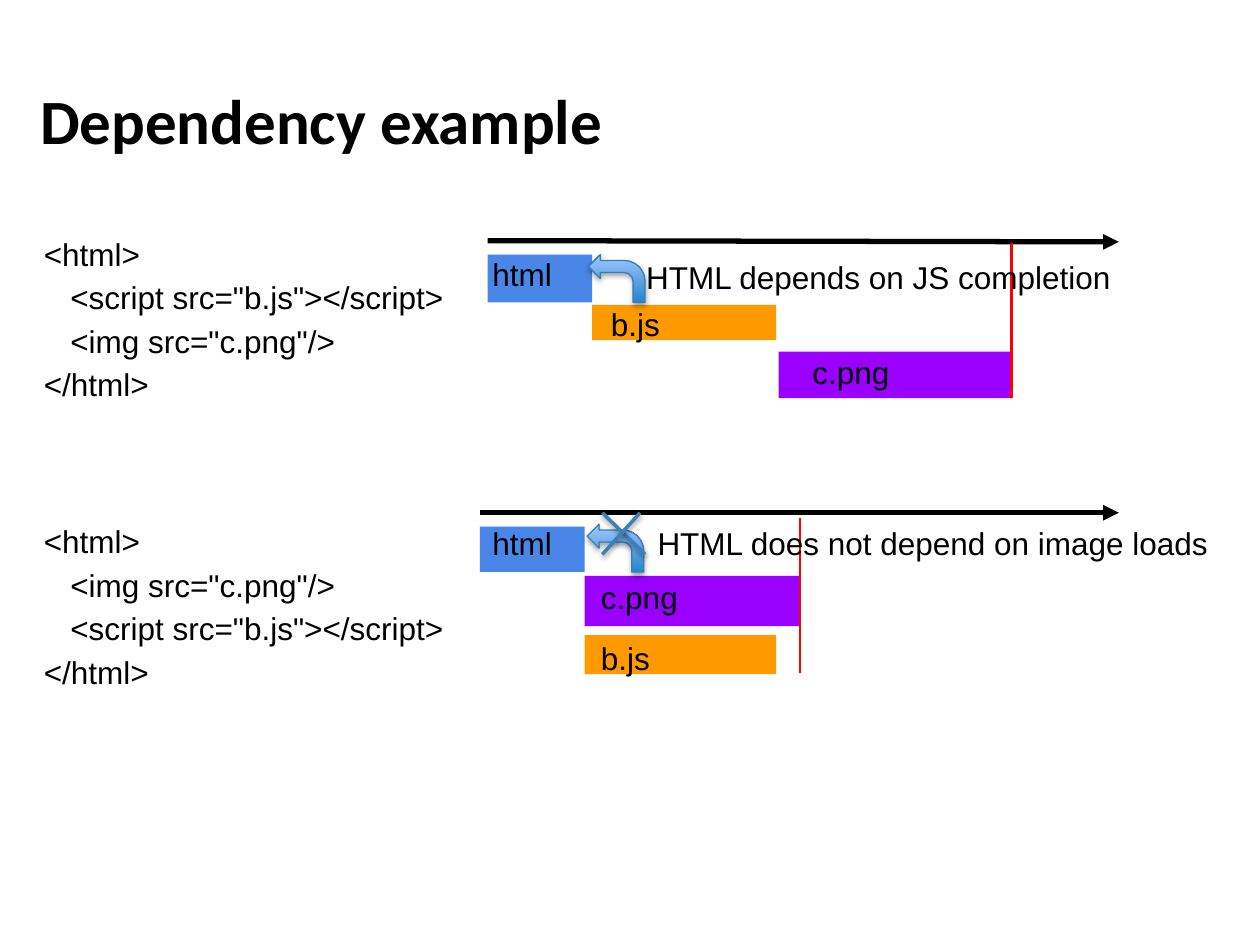
from pptx import Presentation
from pptx.dml.color import RGBColor
from pptx.enum.shapes import MSO_CONNECTOR, MSO_SHAPE
from pptx.enum.text import MSO_ANCHOR
from pptx.oxml.ns import qn
from pptx.util import Inches, Pt
from lxml import etree

STRAIGHT = MSO_CONNECTOR.STRAIGHT
RECT, BENT_ARROW = MSO_SHAPE.RECTANGLE, MSO_SHAPE.BENT_ARROW
TOP, BOTTOM = MSO_ANCHOR.TOP, MSO_ANCHOR.BOTTOM
BLACK, RED, STRIKE = "000000", "FF0000", "3A81BA"
BLUE, ORANGE, PURPLE = "4A86E8", "FF9900", "9900FF"
SCRIPT, IMAGE = '<script src="b.js"></script>', '<img src="c.png"/>'


def rgb(color):
    """Turn a hex string into a colour."""
    return RGBColor.from_string(color)


def add_shadow(sp, alpha, dist):
    """Give a shape or connector a soft shadow straight below it."""
    effects = sp._element.spPr.find(qn("a:effectLst"))
    shadow = etree.SubElement(effects, qn("a:outerShdw"), blurRad=str(Pt(3.1)),
                              dist=str(Pt(dist)), dir="5400000", rotWithShape="0")
    color = etree.SubElement(shadow, qn("a:srgbClr"), val=BLACK)
    etree.SubElement(color, qn("a:alpha"), val=str(alpha * 1000))


def add_text(s, box, lines, size=18, font="Arial", bold=False, anchor=TOP,
             inset=0.1, wrap=True, spacing=None):
    """Add a text box; each line is a pair of text and left margin."""
    tf = s.shapes.add_textbox(*map(Inches, box)).text_frame
    tf.word_wrap, tf.vertical_anchor = wrap, anchor
    tf.margin_left = tf.margin_right = Inches(0.1)
    tf.margin_top = tf.margin_bottom = Inches(inset)
    for i, (text, margin) in enumerate(lines):
        p = tf.add_paragraph() if i else tf.paragraphs[0]
        if margin:
            p._p.get_or_add_pPr().set("marL", str(Inches(margin)))
        if spacing:
            p.line_spacing = spacing
        r = p.add_run()
        r.text = text
        r.font.name, r.font.size, r.font.bold = font, Pt(size), bold
        r.font.color.rgb = rgb(BLACK)


def add_code(s, top, tags):
    """Add an html listing with the given tags indented inside it."""
    lines = [("<html>", 0), *((tag, 0.21) for tag in tags), ("</html>", 0)]
    add_text(s, (0.25, top, 3.6, 1.6), lines, spacing=1.15)


def add_bar(s, box, color):
    """Add a plain load bar."""
    sp = s.shapes.add_shape(RECT, *map(Inches, box))
    sp.shadow.inherit = False
    sp.fill.solid()
    sp.fill.fore_color.rgb = rgb(color)
    sp.line.fill.background()


def add_line(shapes, ends, color, width, arrow=False):
    """Add a straight line, with an arrowhead at its end if asked."""
    sp = shapes.add_connector(STRAIGHT, *map(Inches, ends))
    sp.line.color.rgb = rgb(color)
    sp.line.width = Pt(width)
    if arrow:
        etree.SubElement(sp.line._get_or_add_ln(), qn("a:tailEnd"), type="triangle")
    etree.SubElement(sp._element.spPr, qn("a:effectLst"))
    return sp


def add_dependency(s, left, top):
    """Add the bent arrow that points back at the html bar."""
    sp = s.shapes.add_shape(BENT_ARROW, *map(Inches, (left, top, 0.45, 0.38)))
    sp._element.spPr.find(qn("a:xfrm")).set("flipH", "1")
    sp.fill.gradient()
    sp.fill.gradient_angle = 90
    for stop, color in zip(sp.fill.gradient_stops, ("2783CD", "A0C8FF")):
        stop.color.rgb = rgb(color)
    sp.line.color.rgb = rgb("367EB9")
    sp.line.width = Pt(0.75)
    sp.shadow.inherit = False
    add_shadow(sp, 35, 1.8)


def add_cross(s):
    """Add the grouped cross that strikes out the dependency."""
    group = s.shapes.add_group_shape()
    for start, end in ((4.78, 5.12), (5.08, 4.78)):
        sp = add_line(group.shapes, (start, 4.07, end, 4.4), STRIKE, 2)
        add_shadow(sp, 38, 1.6)


def add_timeline(s, axis, bars, finish, labels):
    """Add a time axis, its load bars, the finish line and the bar labels."""
    add_line(s.shapes, axis, BLACK, 3, arrow=True)
    for box, color in bars:
        add_bar(s, box, color)
    add_line(s.shapes, finish, RED, 1.5)
    for text, left, top in labels:
        add_text(s, (left, top, 1.1, 0.45), [(text, 0)])


def add_caption(s, box, text):
    """Add a caption on one line."""
    add_text(s, box, [(text, 0)], inset=0.05, wrap=False)


def main():
    """Build the slide and save it."""
    prs = Presentation()
    prs.slide_width, prs.slide_height = Inches(10), Inches(7.5)
    s = prs.slides.add_slide(prs.slide_layouts[6])

    add_text(s, (0.22, 0.33, 9.53, 1.02), [("Dependency example", 0)],
             size=36, font="Calibri", bold=True, anchor=BOTTOM)
    add_code(s, 1.72, (SCRIPT, IMAGE))
    add_code(s, 4, (IMAGE, SCRIPT))

    add_timeline(
        s, (3.87, 1.91, 8.88, 1.92),
        [((3.87, 2.02, 0.83, 0.38), BLUE),
         ((4.7, 2.42, 1.46, 0.28), ORANGE),
         ((6.18, 2.79, 1.85, 0.37), PURPLE)],
        (8.03, 1.93, 8.03, 3.16),
        [("html", 3.81, 1.92), ("b.js", 4.75, 2.32), ("c.png", 6.35, 2.7)])
    add_timeline(
        s, (3.81, 4.07, 8.88, 4.07),
        [((3.81, 4.18, 0.83, 0.36), BLUE),
         ((4.64, 5.04, 1.52, 0.31), ORANGE),
         ((4.64, 4.57, 1.71, 0.4), PURPLE)],
        (6.35, 4.11, 6.35, 5.34),
        [("html", 3.81, 4.06), ("b.js", 4.67, 4.97), ("c.png", 4.67, 4.49)])

    add_dependency(s, 4.67, 2.02)
    add_caption(s, (5.03, 2, 3.93, 0.4), "HTML depends on JS completion")
    add_dependency(s, 4.66, 4.16)
    add_caption(s, (5.12, 4.11, 4.62, 0.4), "HTML does not depend on image loads")
    add_cross(s)
    prs.save("out.pptx")


if __name__ == "__main__":
    main()
